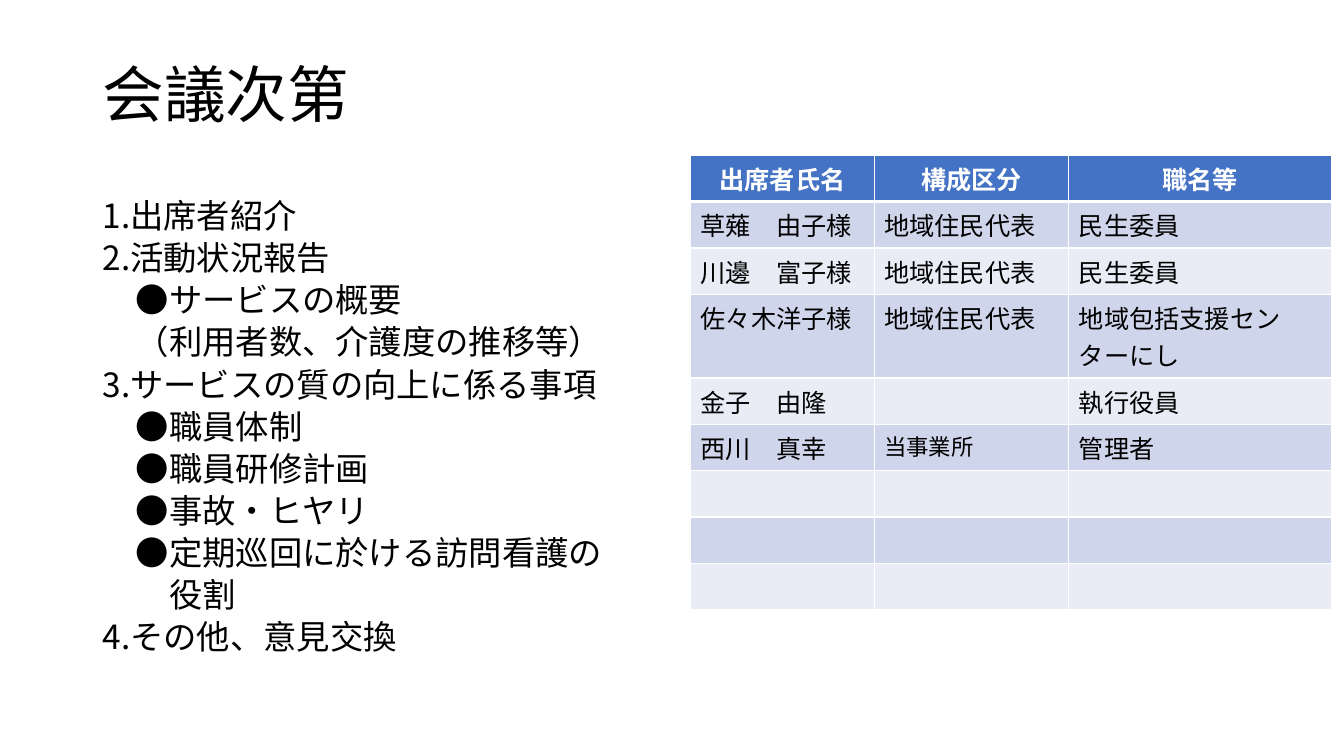
from lxml.etree import SubElement
from pptx import Presentation
from pptx.dml.color import RGBColor
from pptx.enum.text import MSO_ANCHOR, PP_ALIGN
from pptx.oxml.ns import qn
from pptx.util import Inches, Pt

FONT = "Noto Sans CJK JP"
BLACK, WHITE, HEADER = "000000", "FFFFFF", "4472C4"
BANDS = ("CFD5EA", "E9EBF5")

# Agenda lines with their indent level
AGENDA = [
    (0, "1.出席者紹介"),
    (0, "2.活動状況報告"),
    (1, "●サービスの概要"),
    (1, "（利用者数、介護度の推移等）"),
    (0, "3.サービスの質の向上に係る事項"),
    (1, "●職員体制"),
    (1, "●職員研修計画"),
    (1, "●事故・ヒヤリ"),
    (1, "●定期巡回に於ける訪問看護の"),
    (2, "役割"),
    (0, "4.その他、意見交換"),
]

ATTENDEES = [
    ("出席者氏名", "構成区分", "職名等"),
    ("草薙　由子様", "地域住民代表", "民生委員"),
    ("川邊　富子様", "地域住民代表", "民生委員"),
    ("佐々木洋子様", "地域住民代表", "地域包括支援センターにし"),
    ("金子　由隆", "", "執行役員"),
    ("西川　真幸", "当事業所", "管理者"),
] + [("", "", "")] * 3
COLUMN_WIDTHS = (1.82, 1.93, 2.61)
# The fourth row holds a job title of two lines
ROW_HEIGHTS = [0.46] * 3 + [0.83] + [0.46] * 5


def color(hex_code):
    return RGBColor.from_string(hex_code)


def format_runs(paragraph, size, hex_code, bold=False):
    for run in paragraph.runs:
        run.font.size = Pt(size)
        run.font.bold = bold
        run.font.name = FONT
        run.font.color.rgb = color(hex_code)
        SubElement(run.font._element, qn("a:ea"), typeface=FONT)


def add_text(slide, left, top, width, height, lines, size, line_spacing,
             space_before=0, anchor=MSO_ANCHOR.TOP):
    frame = slide.shapes.add_textbox(
        Inches(left), Inches(top), Inches(width), Inches(height)).text_frame
    frame.word_wrap = True
    frame.vertical_anchor = anchor
    frame.text = "\n".join(line for _, line in lines)
    for paragraph, (level, _) in zip(frame.paragraphs, lines):
        paragraph.line_spacing = line_spacing
        paragraph.space_before = Pt(space_before)
        # One level is one character wide
        paragraph._p.get_or_add_pPr().set("marL", str(Pt(size * level)))
        format_runs(paragraph, size, BLACK)


def set_borders(cell, top, bottom):
    properties = cell._tc.get_or_add_tcPr()
    for side, width in (("L", 1), ("R", 1), ("T", top), ("B", bottom)):
        line = SubElement(properties, qn(f"a:ln{side}"), w=str(Pt(width)))
        fill = SubElement(line, qn("a:solidFill"))
        SubElement(fill, qn("a:srgbClr"), val=WHITE)


def add_attendee_table(slide, left, top, widths, heights, rows):
    table = slide.shapes.add_table(
        len(rows), len(widths), Inches(left), Inches(top),
        Inches(sum(widths)), Inches(sum(heights))).table
    for column, width in zip(table.columns, widths):
        column.width = Inches(width)
    for table_row, height in zip(table.rows, heights):
        table_row.height = Inches(height)
    for r, row in enumerate(rows):
        is_header = r == 0
        for c, text in enumerate(row):
            cell = table.cell(r, c)
            set_borders(cell, 3 if r == 1 else 1, 3 if is_header else 1)
            cell.fill.solid()
            cell.fill.fore_color.rgb = color(
                HEADER if is_header else BANDS[(r - 1) % 2])
            cell.text = text
            paragraph = cell.text_frame.paragraphs[0]
            if is_header:
                paragraph.alignment = PP_ALIGN.CENTER
            format_runs(paragraph, 16 if text == "当事業所" else 18,
                        WHITE if is_header else BLACK, is_header)


def main():
    presentation = Presentation()
    presentation.slide_width = Inches(13.33)
    presentation.slide_height = Inches(7.5)
    slide = presentation.slides.add_slide(presentation.slide_layouts[6])

    # Title
    add_text(slide, 0.92, 0.4, 11.5, 1.14, [(0, "会議次第")], 44, 0.9,
             anchor=MSO_ANCHOR.MIDDLE)
    # Agenda
    add_text(slide, 0.92, 2, 11.5, 4.76, AGENDA, 23.8, 0.7, space_before=10)
    # Attendees
    add_attendee_table(slide, 6.85, 1.54, COLUMN_WIDTHS, ROW_HEIGHTS,
                       ATTENDEES)

    presentation.save("out.pptx")


if __name__ == "__main__":
    main()
